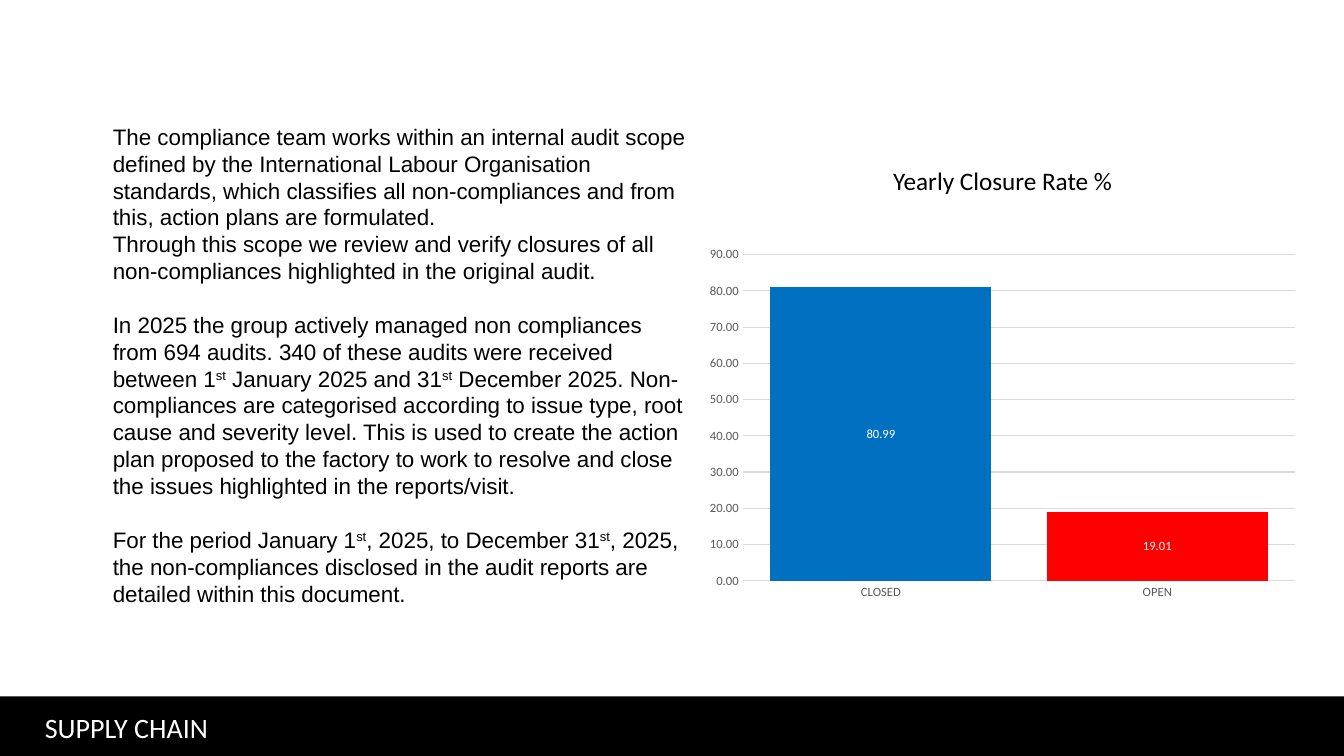
"""Builds the supply chain closure rate slide."""
from lxml import etree
from pptx import Presentation
from pptx.chart.data import CategoryChartData
from pptx.dml.color import RGBColor
from pptx.enum.chart import XL_CHART_TYPE, XL_LABEL_POSITION, XL_TICK_MARK
from pptx.enum.shapes import MSO_SHAPE
from pptx.enum.text import MSO_ANCHOR, PP_ALIGN
from pptx.util import Inches, Pt

COLUMNS = XL_CHART_TYPE.COLUMN_CLUSTERED
LABEL_CENTER = XL_LABEL_POSITION.CENTER
NO_TICK = XL_TICK_MARK.NONE
RECTANGLE = MSO_SHAPE.RECTANGLE
TOP = MSO_ANCHOR.TOP
CENTER = PP_ALIGN.CENTER
LEFT = PP_ALIGN.LEFT

COLORS = {
    "black": "000000",
    "white": "FFFFFF",
    "axis": "595959",
    "grid": "D9D9D9",
    "closed": "0070C0",
    "open": "FF0000",
}
LINE_PITCH = Pt(19.2)

SCOPE = [
    ("The compliance team works within an internal audit scope defined by the "
     "International Labour Organisation standards, which classifies all "
     "non-compliances and from this, action plans are formulated.", 0),
    ("Through this scope we review and verify closures of all non-compliances "
     "highlighted in the original audit.", 0),
    ("In 2025 the group actively managed non compliances from 694 audits. 340 of "
     "these audits were received between 1^st^ January 2025 and 31^st^ December "
     "2025. Non-compliances are categorised according to issue type, root cause "
     "and severity level. This is used to create the action plan proposed to the "
     "factory to work to resolve and close the issues highlighted in the "
     "reports/visit.", LINE_PITCH),
    ("For the period January 1^st^, 2025, to December 31^st^, 2025, the "
     "non-compliances disclosed in the audit reports are detailed within this "
     "document.", LINE_PITCH),
]
CLOSURE_RATES = {"CLOSED": 80.99, "OPEN": 19.01}


class ClosureSlide:
    """Holds the style and the current slide."""

    def __init__(self, deck):
        self.slide = deck.slides.add_slide(deck.slide_layouts[5])

    def color(self, name):
        return RGBColor.from_string(COLORS[name])

    def style(self, font, size, color, name="Calibri"):
        font.name = name
        font.size = Pt(size)
        font.color.rgb = self.color(color)

    def place(self, shape, box):
        shape.left, shape.top, shape.width, shape.height = map(Inches, box)

    def write_line(self, shape, text, size, color):
        frame = shape.text_frame
        frame.text = text
        frame.word_wrap = True
        frame.vertical_anchor = TOP
        line = frame.paragraphs[0]
        line.alignment = CENTER
        self.style(line.font, size, color)

    def title(self, text, box):
        heading = self.slide.shapes.title
        self.place(heading, box)
        self.write_line(heading, text, 18, "black")

    def label(self, text, box):
        caption = self.slide.shapes.add_textbox(*map(Inches, box))
        self.write_line(caption, text, 20, "white")

    def bar(self, box):
        band = self.slide.shapes.add_shape(RECTANGLE, *map(Inches, box))
        band.shadow.inherit = False
        band.fill.solid()
        band.fill.fore_color.rgb = self.color("black")
        band.line.fill.background()

    def body(self, passages, box):
        frame = self.slide.shapes.add_textbox(*map(Inches, box)).text_frame
        frame.word_wrap = True
        for index, (text, gap) in enumerate(passages):
            passage = frame.add_paragraph() if index else frame.paragraphs[0]
            passage.alignment = LEFT
            passage.line_spacing = LINE_PITCH
            passage.space_before = gap
            self.style(passage.font, 16, "black", "Arial")
            for part, words in enumerate(text.split("^")):
                run = passage.add_run()
                run.text = words
                if part % 2:
                    run.font._element.set("baseline", "30000")

    def axis(self, axis):
        axis.major_tick_mark = axis.minor_tick_mark = NO_TICK
        self.style(axis.tick_labels.font, 9, "axis")

    def grid_line(self, line):
        line.color.rgb = self.color("grid")
        line.width = Pt(0.75)

    def column_chart(self, rates, point_colors, box):
        data = CategoryChartData(number_format="0.00")
        data.categories = list(rates)
        data.add_series("Series 1", list(rates.values()))
        chart = self.slide.shapes.add_chart(COLUMNS, *map(Inches, box), data).chart
        chart.has_legend = False
        chart.has_title = False
        self.style(chart.font, 10, "black")

        categories, values = chart.category_axis, chart.value_axis
        self.axis(categories)
        self.axis(values)
        self.grid_line(categories.format.line)
        self.grid_line(values.major_gridlines.format.line)
        values.format.line.fill.background()
        values.minimum_scale, values.maximum_scale, values.major_unit = 0, 90, 10
        values.tick_labels.number_format = "0.00"
        values.tick_labels.number_format_is_linked = False

        plot = chart.plots[0]
        plot.vary_by_categories = False
        plot.gap_width = 25
        plot.overlap = -27
        series = plot.series[0]
        for index, name in enumerate(point_colors):
            fill = series.points[index].format.fill
            fill.solid()
            fill.fore_color.rgb = self.color(name)
        labels = series.data_labels
        labels.show_value = True
        labels.position = LABEL_CENTER
        labels.number_format = "0.00"
        labels.number_format_is_linked = False
        self.style(labels.font, 9, "white")


def main():
    deck = Presentation()
    deck.slide_width, deck.slide_height = Inches(13.33), Inches(7.5)
    page = ClosureSlide(deck)
    page.title("Yearly Closure Rate %", (7.92, 1.59, 4.05, 0.4))
    page.body(SCOPE, (1.02, 1.17, 5.91, 4.95))
    page.bar((0, 6.91, 13.33, 0.63))
    page.label("SUPPLY CHAIN", (-0.33, 7, 3.17, 0.44))
    page.column_chart(CLOSURE_RATES, ("closed", "open"), (6.92, 2.38, 6.05, 3.64))
    deck.save("out.pptx")


if __name__ == "__main__":
    main()
